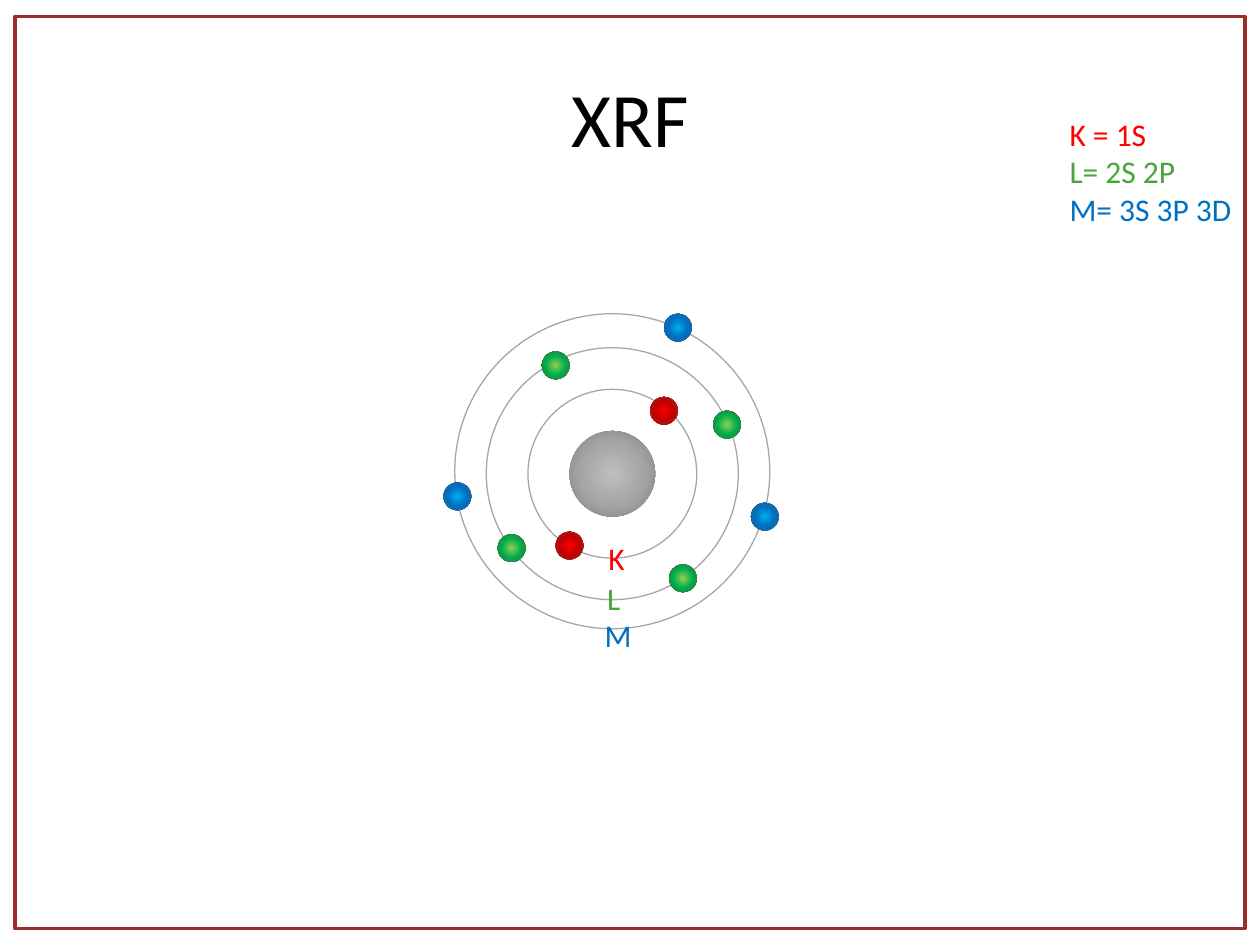
from dataclasses import dataclass
from lxml import etree
from pptx import Presentation
from pptx import util as u
from pptx.dml.color import RGBColor
from pptx.enum import shapes, text
from pptx.oxml import ns


@dataclass(frozen=True)
class Theme:
    font: str = "Calibri"
    head: int = 44
    body: int = 18
    ink: str = "000000"
    frame: str = "9C2D2A"
    ring: str = "A6A6A6"
    core: tuple = ("BFBFBF", "A6A6A6", "808080")
    red: tuple = ("FF0000", "C00000", "953735")
    green: tuple = ("92D050", "00B050", "4F6228")
    blue: tuple = ("00B0F0", "0070C0", "376092")
    names: tuple = ("FF0000", "46A638", "0070C0")


class Deck:
    def __init__(self, theme):
        self.theme = theme
        self.file = Presentation()
        self.file.slide_width = u.Inches(10)
        self.file.slide_height = u.Inches(7.5)
        self.slide = self.file.slides.add_slide(self.file.slide_layouts[6])
        self.pen = self.slide.shapes

    def group(self):
        self.pen = self.slide.shapes.add_group_shape().shapes

    def ungroup(self):
        self.pen = self.slide.shapes

    def outline(self, kind, box, color, width):
        shape = self.pen.add_shape(kind, *map(u.Inches, box))
        shape.shadow.inherit = False
        shape.fill.background()
        shape.line.color.rgb = RGBColor.from_string(color)
        shape.line.width = u.Pt(width)

    def ring(self, x, y, size):
        box = (x, y, size, size)
        self.outline(shapes.MSO_SHAPE.OVAL, box, self.theme.ring, 0.75)

    def ball(self, x, y, size, tones):
        box = map(u.Inches, (x, y, size, size))
        shape = self.pen.add_shape(shapes.MSO_SHAPE.OVAL, *box)
        shape.shadow.inherit = False
        shape.line.fill.background()
        shape.fill.gradient()
        grad = shape._element.spPr.find(ns.qn("a:gradFill"))
        for child in list(grad):
            grad.remove(child)
        stops = etree.SubElement(grad, ns.qn("a:gsLst"))
        for place, tone in zip((0, 50000, 100000), tones):
            stop = etree.SubElement(stops, ns.qn("a:gs"), pos=str(place))
            etree.SubElement(stop, ns.qn("a:srgbClr"), val=tone)
        way = etree.SubElement(grad, ns.qn("a:path"))
        way.set("path", "circle")
        sides = dict.fromkeys("ltrb", "50000")
        etree.SubElement(way, ns.qn("a:fillToRect"), **sides)

    def label(self, box, lines, size):
        frame = self.pen.add_textbox(*map(u.Inches, box)).text_frame
        frame.word_wrap = False
        frame.auto_size = text.MSO_AUTO_SIZE.SHAPE_TO_FIT_TEXT
        frame.text = "\n".join(words for words, _ in lines)
        for para, (_, color) in zip(frame.paragraphs, lines):
            para.font.name = self.theme.font
            para.font.size = u.Pt(size)
            para.font.color.rgb = RGBColor.from_string(color)
        return frame

    def title(self, box, words):
        frame = self.label(box, [(words, self.theme.ink)], self.theme.head)
        frame.word_wrap = True
        frame.auto_size = text.MSO_AUTO_SIZE.NONE
        frame.vertical_anchor = text.MSO_ANCHOR.MIDDLE
        frame.paragraphs[0].alignment = text.PP_ALIGN.CENTER


def main():
    theme = Theme()
    deck = Deck(theme)
    deck.title((0.5, 0.3, 9, 1.25), "XRF")

    deck.group()
    deck.ball(4.52, 3.42, 0.68, theme.core)
    for ring in ((4.19, 3.09, 1.34), (3.86, 2.76, 2), (3.61, 2.49, 2.5)):
        deck.ring(*ring)
    shells = (
        (theme.red, ((5.16, 3.15), (4.41, 4.22))),
        (theme.green, ((5.31, 4.48), (5.66, 3.26), (4.3, 2.79), (3.95, 4.24))),
        (theme.blue, ((5.27, 2.49), (5.96, 3.99), (3.52, 3.83))),
    )
    for tones, spots in shells:
        for x, y in spots:
            deck.ball(x, y, 0.22, tones)
    boxes = ((4.73, 4.23, 0.33, 0.4), (4.72, 4.55, 0.31, 0.4), (4.7, 4.84, 0.42, 0.4))
    for box, name in zip(boxes, zip(("K", "L", "M"), theme.names)):
        deck.label(box, [name], theme.body)
    deck.ungroup()

    key = ("K = 1S", "L= 2S 2P", "M= 3S 3P 3D")
    deck.label((8.39, 0.86, 1.5, 1.01), list(zip(key, theme.names)), theme.body)
    deck.outline(shapes.MSO_SHAPE.RECTANGLE, (0.12, 0.13, 9.76, 7.24), theme.frame, 2)
    deck.file.save("out.pptx")


if __name__ == "__main__":
    main()
